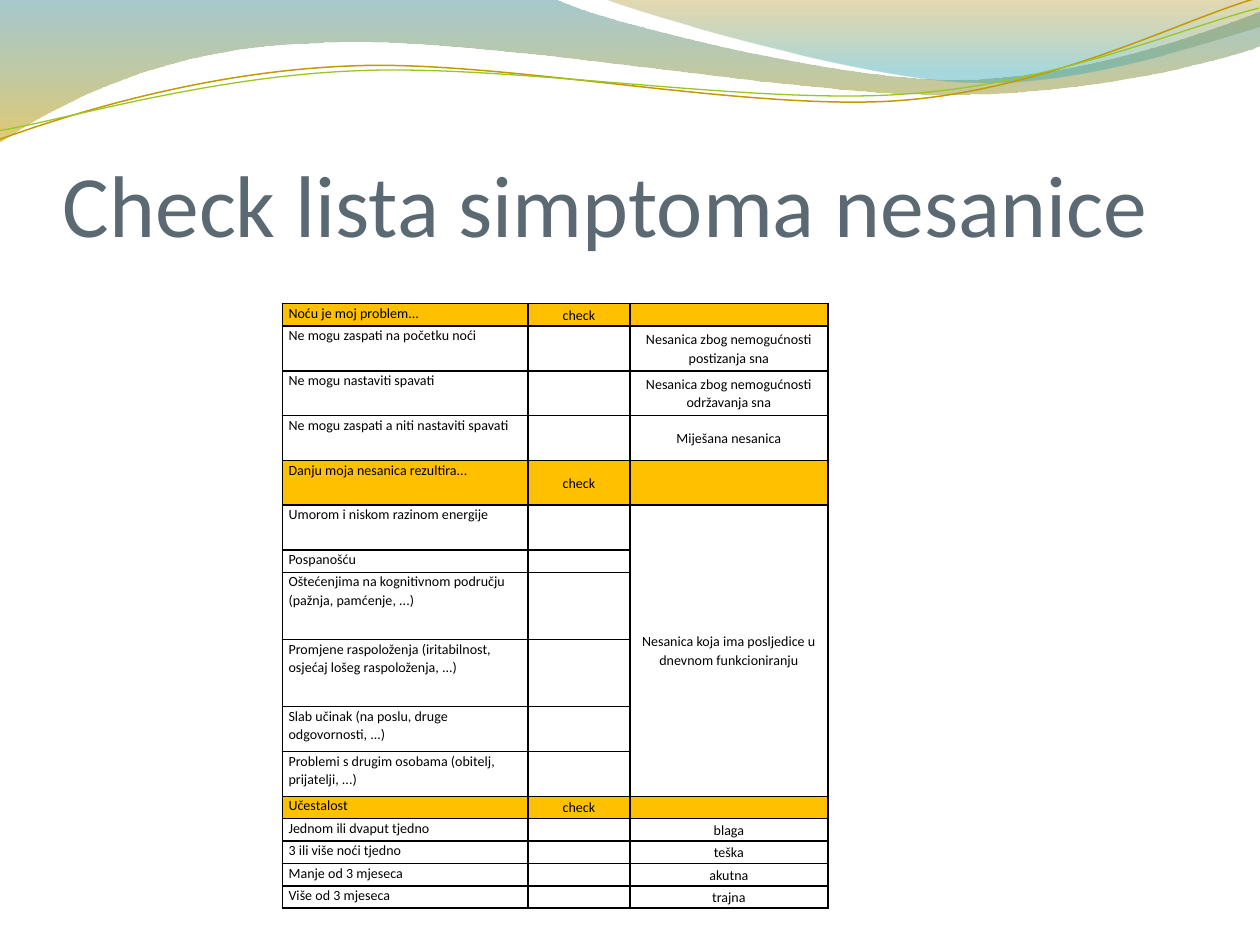
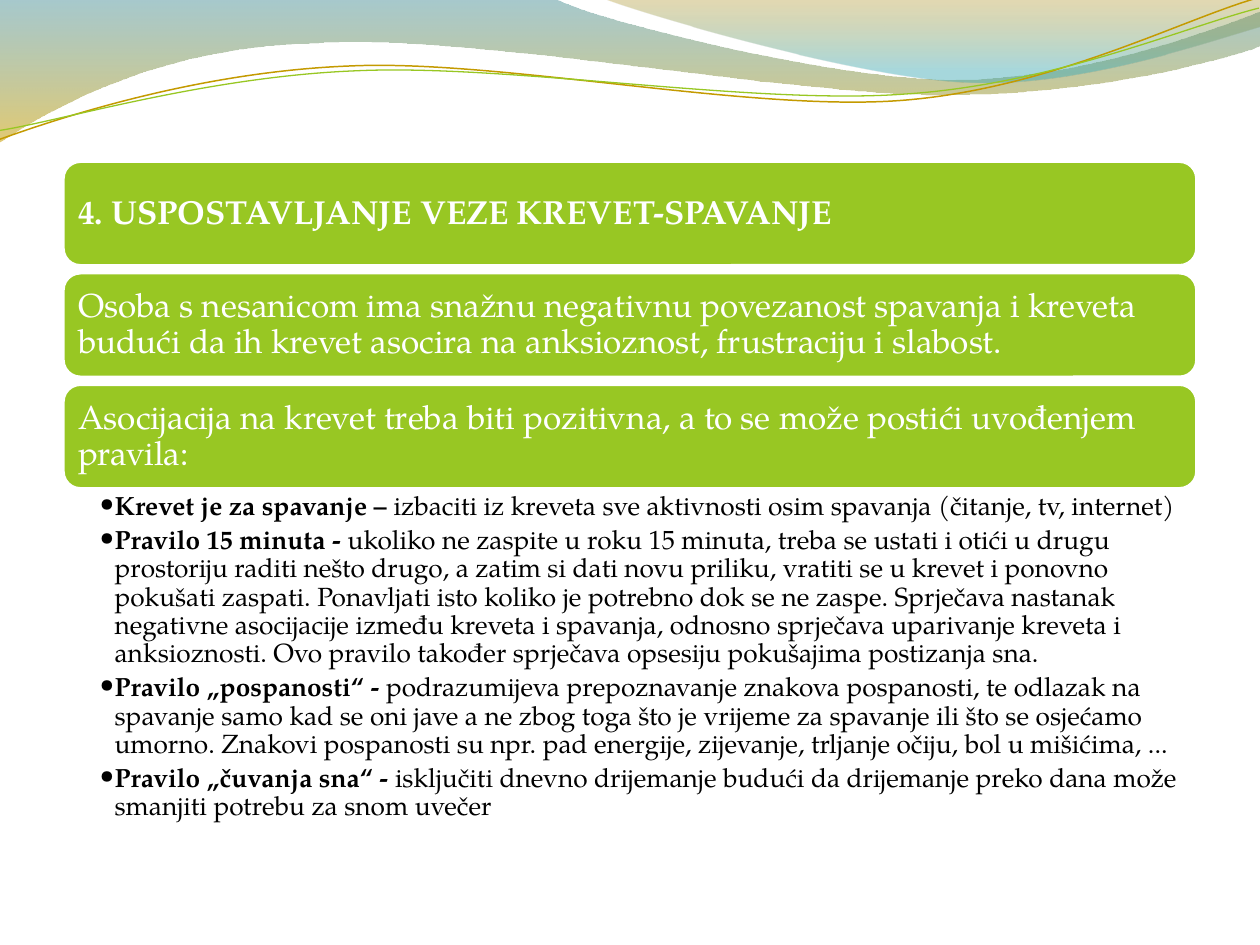
"""Build two slides on insomnia: a symptom checklist and bed-sleep rules."""
from lxml import etree
from pptx import Presentation
from pptx import util as u
from pptx.dml.color import RGBColor
from pptx.enum import shapes, text
from pptx.oxml.ns import qn

COLORS = {
    "title": "5B6973", "text": "000000", "white": "FFFFFF",
    "green": "98C723", "gold": "C49A00", "header": "FFC000",
    "teal": "3B8890", "mustard": "C99E00", "olive": "A48100", "aqua": "3EA9B4",
}
TITLE_FONT = {"name": "Calibri", "size": u.Pt(50)}
CELL_FONT = {"name": "Calibri", "size": u.Pt(8)}
PANEL_FONT = {"name": "TeX Gyre Pagella", "size": u.Pt(19)}
RULE_FONT = {"name": "TeX Gyre Pagella", "size": u.Pt(15)}
LEFT, WIDTH = 0.5, 9
STRAND_ANGLE = 357.3

WAVES = [
    {"start": (0, 0),
     "segments": [(4.4, -0.01), (4.76, 0.17, 6.64, 0.63, 7.58, 0.63),
                  (8.53, 0.63, 9.58, 0.26, 10, 0.09), (10.01, 0.36),
                  (9.83, 0.44, 8.7, 0.76, 7.46, 0.75),
                  (6.22, 0.75, 3.82, 0.28, 2.57, 0.34),
                  (1.29, 0.36, 0.46, 0.83, -0.01, 1.13), (0, 0)],
     "stops": [(0, "teal", 45), (1, "mustard", 55)]},
    {"start": (4.79, -0.01),
     "segments": [(5.09, 0.11, 6.82, 0.62, 7.69, 0.65),
                  (8.56, 0.69, 9.61, 0.32, 10, 0.21), (10, 0), (4.79, -0.01)],
     "stops": [(0, "olive", 30), (0.8, "aqua", 45)]},
]
STRANDS = [
    {"start": (-0.02, 0.87),
     "segments": [(0.47, 0.72, 1.58, 0.41, 2.78, 0.42),
                  (3.96, 0.42, 5.91, 0.93, 7.12, 0.9),
                  (8.32, 0.87, 9.4, 0.36, 10, 0.22)],
     "line": ("gold", 0.85)},
    {"start": (-0.02, 0.8),
     "segments": [(0.46, 0.75, 1.64, 0.45, 2.83, 0.46),
                  (4.03, 0.46, 5.96, 0.88, 7.16, 0.85),
                  (8.35, 0.83, 9.42, 0.42, 10.01, 0.3)],
     "line": ("green", 0.75)},
]

CHECKLIST = [
    (1, "Noću je moj problem...", "check", ""),
    (2, "Ne mogu zaspati na početku noći", "", "Nesanica zbog nemogućnosti postizanja sna"),
    (2, "Ne mogu nastaviti spavati", "", "Nesanica zbog nemogućnosti održavanja sna"),
    (2, "Ne mogu zaspati a niti nastaviti spavati", "", "Miješana nesanica"),
    (2, "Danju moja nesanica rezultira...", "check", ""),
    (2, "Umorom i niskom razinom energije", "",
     "Nesanica koja ima posljedice u dnevnom funkcioniranju"),
    (1, "Pospanošću", "", ""),
    (3, "Oštećenjima na kognitivnom području (pažnja, pamćenje, ...)", "", ""),
    (3, "Promjene raspoloženja (iritabilnost, osjećaj lošeg raspoloženja, ...)", "", ""),
    (2, "Slab učinak (na poslu, druge odgovornosti, ...)", "", ""),
    (2, "Problemi s drugim osobama (obitelj, prijatelji, ...)", "", ""),
    (1, "Učestalost", "check", ""),
    (1, "Jednom ili dvaput tjedno", "", "blaga"),
    (1, "3 ili više noći tjedno", "", "teška"),
    (1, "Manje od 3 mjeseca", "", "akutna"),
    (1, "Više od 3 mjeseca", "", "trajna"),
]
DAYTIME_ROWS = (5, 10)

PANELS = [
    ("4. USPOSTAVLJANJE VEZE KREVET-SPAVANJE", True),
    ("Osoba s nesanicom ima snažnu negativnu povezanost spavanja i kreveta "
     "budući da ih krevet asocira na anksioznost, frustraciju i slabost.", False),
    ("Asocijacija na krevet treba biti pozitivna, a to se može postići "
     "uvođenjem pravila:", False),
]
RULES = [
    ("Krevet je za spavanje – ",
     "izbaciti iz kreveta sve aktivnosti osim spavanja (čitanje, tv, internet)"),
    ("Pravilo 15 minuta - ",
     "ukoliko ne zaspite u roku 15 minuta, treba se ustati i otići u drugu "
     "prostoriju raditi nešto drugo, a zatim si dati novu priliku, vratiti se u "
     "krevet i ponovno pokušati zaspati. Ponavljati isto koliko je potrebno dok "
     "se ne zaspe. Sprječava nastanak negativne asocijacije između kreveta i "
     "spavanja, odnosno sprječava uparivanje kreveta i anksioznosti. Ovo pravilo "
     "također sprječava opsesiju pokušajima postizanja sna."),
    ("Pravilo „pospanosti“ - ",
     "podrazumijeva prepoznavanje znakova pospanosti, te odlazak na spavanje samo "
     "kad se oni jave a ne zbog toga što je vrijeme za spavanje ili što se "
     "osjećamo umorno. Znakovi pospanosti su npr. pad energije, zijevanje, "
     "trljanje očiju, bol u mišićima, ..."),
    ("Pravilo „čuvanja sna“ - ",
     "isključiti dnevno drijemanje budući da drijemanje preko dana može smanjiti "
     "potrebu za snom uvečer"),
]


def rgb(name):
    """Return the named colour."""
    return RGBColor.from_string(COLORS[name])


def apply(obj, fmt):
    """Set every attribute listed in a dict."""
    for key, value in fmt.items():
        setattr(obj, key, value)


def margins(left, top, right, bottom):
    """Return margin attributes for a text frame or a cell."""
    sides = zip(("left", "top", "right", "bottom"), (left, top, right, bottom))
    return {f"margin_{side}": u.Inches(value) for side, value in sides}


def add_run(p, content, font, color, bold=False):
    """Add a formatted run to a paragraph."""
    r = p.add_run()
    r.text = content
    apply(r.font, {**font, "bold": bold})
    r.font.color.rgb = rgb(color)


def add_textbox(slide, box, insets, anchor):
    """Add a wrapping text box and return its text frame."""
    tf = slide.shapes.add_textbox(*map(u.Inches, box)).text_frame
    apply(tf, {"word_wrap": True, "vertical_anchor": anchor, **margins(*insets)})
    return tf


def bend_lines(sp, segments):
    """Turn each run of three lines that stands for a cubic into one curve."""
    lines = iter(list(sp._element.spPr.iter(qn("a:lnTo"))))
    for segment in segments:
        line = next(lines)
        if len(segment) == 6:
            curve = etree.Element(qn("a:cubicBezTo"))
            line.addprevious(curve)
            for part in (line, next(lines), next(lines)):
                curve.append(part[0])
                part.getparent().remove(part)


def add_curve(slide, start, segments, close):
    """Add a freeform of lines and cubic curves without a shadow."""
    builder = slide.shapes.build_freeform(*map(u.Inches, start))
    points = [tuple(map(u.Inches, segment[i:i + 2]))
              for segment in segments for i in range(0, len(segment), 2)]
    builder.add_line_segments(points, close=close)
    sp = builder.convert_to_shape()
    sp.shadow.inherit = False
    bend_lines(sp, segments)
    return sp


def add_wave(slide, start, segments, stops):
    """Add a closed wave with a translucent vertical gradient."""
    sp = add_curve(slide, start, segments, True)
    sp.line.fill.background()
    sp.fill.gradient()
    sp.fill.gradient_angle = 270
    for stop, (position, color, _) in zip(sp.fill.gradient_stops, stops):
        stop.position = position
        stop.color.rgb = rgb(color)
    tints = sp._element.spPr.iter(qn("a:srgbClr"))
    for tint, (_, _, opacity) in zip(tints, stops):
        etree.SubElement(tint, qn("a:alpha"), val=str(opacity * 1000))


def add_strand(slide, start, segments, line):
    """Add an open thin curve, slightly turned."""
    sp = add_curve(slide, start, segments, False)
    sp.rotation = STRAND_ANGLE
    sp.fill.background()
    color, width = line
    sp.line.color.rgb = rgb(color)
    sp.line.width = u.Pt(width)


def add_slide(prs):
    """Add a blank slide with the wavy header."""
    slide = prs.slides.add_slide(prs.slide_layouts[6])
    for wave in WAVES:
        add_wave(slide, **wave)
    for strand in STRANDS:
        add_strand(slide, **strand)
    return slide


def add_title(slide, content):
    """Add the slide title."""
    tf = add_textbox(slide, (LEFT, 0.77, WIDTH, 1.25), (0, 0.05, 0, 0),
                     text.MSO_ANCHOR.BOTTOM)
    add_run(tf.paragraphs[0], content, TITLE_FONT, "title")


def add_borders(cell):
    """Draw a thin black line on each side of a cell."""
    tcPr = cell._tc.get_or_add_tcPr()
    for side in "LRTB":
        ln = etree.SubElement(tcPr, qn(f"a:ln{side}"), w=str(u.Pt(1)))
        fill = etree.SubElement(ln, qn("a:solidFill"))
        etree.SubElement(fill, qn("a:srgbClr"), val=COLORS["text"])


def fill_cell(cell, content, centred, header):
    """Format one checklist cell and write its text."""
    add_borders(cell)
    apply(cell, margins(0.05, 0, 0.05, 0))
    p = cell.text_frame.paragraphs[0]
    p.line_spacing = 1.07
    if centred:
        cell.vertical_anchor = text.MSO_ANCHOR.MIDDLE
        p.alignment = text.PP_ALIGN.CENTER
    if header:
        cell.fill.solid()
        cell.fill.fore_color.rgb = rgb("header")
    else:
        cell.fill.background()
    if content:
        add_run(p, content, CELL_FONT, "text")
    else:
        p._p.get_or_add_endParaRPr().set("sz", str(int(CELL_FONT["size"].pt * 100)))


def add_checklist(slide):
    """Add the symptom table, with row heights counted in lines."""
    widths, height = (1.95, 0.81, 1.57), 4.8
    line = height / sum(row[0] for row in CHECKLIST)
    box = (2.24, 2.41, sum(widths), height)
    table = slide.shapes.add_table(len(CHECKLIST), len(widths), *map(u.Inches, box)).table
    apply(table, {"first_row": False, "horz_banding": False})
    for column, width in zip(table.columns, widths):
        column.width = u.Inches(width)
    for i, (lines, *contents) in enumerate(CHECKLIST):
        table.rows[i].height = u.Inches(lines * line)
        for j, content in enumerate(contents):
            fill_cell(table.cell(i, j), content, j > 0, contents[1] == "check")
    first, last = DAYTIME_ROWS
    table.cell(first, 2).merge(table.cell(last, 2))


def add_panel(slide, top, content, bold):
    """Add a green rounded panel with white text."""
    sp = slide.shapes.add_shape(shapes.MSO_SHAPE.ROUNDED_RECTANGLE,
                                *map(u.Inches, (LEFT, top, WIDTH, 0.83)))
    sp.shadow.inherit = False
    sp.fill.solid()
    sp.fill.fore_color.rgb = rgb("green")
    sp.line.color.rgb = rgb("white")
    sp.line.width = u.Pt(2)
    tf = sp.text_frame
    apply(tf, {"word_wrap": True, "vertical_anchor": text.MSO_ANCHOR.MIDDLE,
               **margins(0.08, 0.08, 0.08, 0.08)})
    p = tf.paragraphs[0]
    apply(p, {"alignment": text.PP_ALIGN.LEFT, "line_spacing": 0.9})
    add_run(p, content, PANEL_FONT, "white", bold)


def add_rules(slide):
    """Add the bulleted rules, each with a bold lead."""
    tf = add_textbox(slide, (LEFT, 3.88, WIDTH, 2.75), (0.29, 0.03, 0.15, 0.03),
                     text.MSO_ANCHOR.TOP)
    indent = u.Inches(0.12)
    for i, (lead, detail) in enumerate(RULES):
        p = tf.add_paragraph() if i else tf.paragraphs[0]
        apply(p, {"level": 1, "line_spacing": 0.9, "space_after": u.Pt(3.2)})
        pPr = p._p.get_or_add_pPr()
        pPr.set("marL", str(indent))
        pPr.set("indent", str(-indent))
        etree.SubElement(pPr, qn("a:buFont"), typeface=RULE_FONT["name"])
        etree.SubElement(pPr, qn("a:buChar"), char="•")
        add_run(p, lead, RULE_FONT, "text", True)
        add_run(p, detail, RULE_FONT, "text")


def main():
    """Build and save the presentation."""
    prs = Presentation()
    apply(prs, {"slide_width": u.Inches(10), "slide_height": u.Inches(7.5)})

    slide = add_slide(prs)
    add_title(slide, "Check lista simptoma nesanice")
    add_checklist(slide)

    slide = add_slide(prs)
    for i, (content, bold) in enumerate(PANELS):
        add_panel(slide, 1.28 + i * 1.77 / 2, content, bold)
    add_rules(slide)

    prs.save("out.pptx")


if __name__ == "__main__":
    main()
